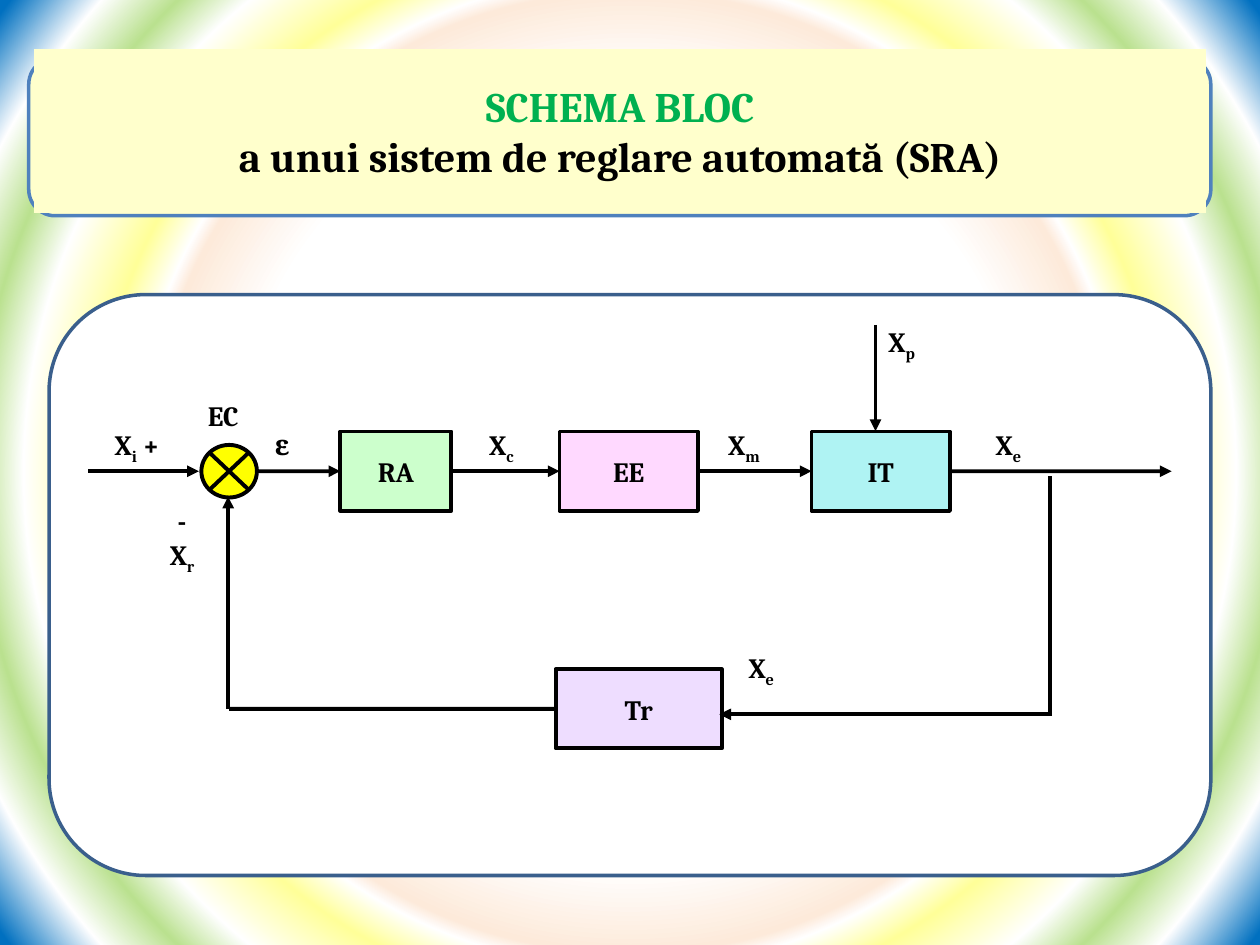
from lxml import etree
from pptx import Presentation
from pptx import util as u
from pptx.dml.color import RGBColor
from pptx.enum import shapes, text
from pptx.oxml import ns

BLACK = RGBColor(0x00, 0x00, 0x00)
WHITE = RGBColor(0xFF, 0xFF, 0xFF)
GREEN = RGBColor(0x00, 0xB0, 0x50)
CREAM = RGBColor(0xFF, 0xFF, 0xCC)
YELLOW = RGBColor(0xFF, 0xFF, 0x00)
MINT = RGBColor(0xCC, 0xFF, 0xCC)
PINK = RGBColor(0xFF, 0xD9, 0xFF)
AQUA = RGBColor(0xAF, 0xF3, 0xF3)
LILAC = RGBColor(0xEE, 0xDD, 0xFF)
BANNER_EDGE = RGBColor(0x4F, 0x81, 0xBD)
PANEL_EDGE = RGBColor(0x3A, 0x5F, 0x8C)

# Background rings: position in percent, colour
RINGS = [(50, WHITE), (61, RGBColor(0xFD, 0xEA, 0xDA)), (63, WHITE),
         (68, RGBColor(0xFF, 0xFF, 0x99)), (77, WHITE),
         (83, RGBColor(0xBA, 0xE1, 0x8F)), (90, WHITE),
         (99, RGBColor(0x00, 0x70, 0xC0))]

AXIS = 9.5          # height of the forward path, cm
BLOCK_HEIGHT = 1.6
FEEDBACK = 14.29    # height of the feedback path
LABEL_TOP = 8.61    # labels above the forward path
TOP, LEFT, BOTTOM, RIGHT = range(4)


class Diagram:
    font = "Cambria"
    size = 16
    stroke = 2.25

    def __init__(self, page):
        self.page = page

    def background(self, rings):
        self.page.background.fill.gradient()
        gradient = next(self.page._element.iter(ns.qn("a:gradFill")))
        for child in list(gradient):
            gradient.remove(child)
        stops = etree.SubElement(gradient, ns.qn("a:gsLst"))
        for position, color in rings:
            stop = etree.SubElement(stops, ns.qn("a:gs"), pos=str(position * 1000))
            etree.SubElement(stop, ns.qn("a:srgbClr"), val=str(color))
        circle = etree.SubElement(gradient, ns.qn("a:path"))
        circle.set("path", "circle")
        etree.SubElement(circle, ns.qn("a:fillToRect"),
                         l="50000", t="50000", r="50000", b="50000")

    def style_runs(self, para, color=BLACK, size=None):
        for span in para.runs:
            span.font.name = self.font
            span.font.size = u.Pt(size or self.size)
            span.font.bold = True
            span.font.color.rgb = color

    def shape(self, kind, left, top, width, height, fill, edge=BLACK, stroke=None):
        box = self.page.shapes.add_shape(
            kind, u.Cm(left), u.Cm(top), u.Cm(width), u.Cm(height))
        box.shadow.inherit = False
        box.fill.solid()
        box.fill.fore_color.rgb = fill
        box.line.color.rgb = edge
        box.line.width = u.Pt(stroke or self.stroke)
        return box

    def block(self, name, left, width, middle, fill):
        box = self.shape(shapes.MSO_SHAPE.RECTANGLE, left, middle - BLOCK_HEIGHT / 2,
                         width, BLOCK_HEIGHT, fill)
        box.text_frame.text = name
        box.text_frame.vertical_anchor = text.MSO_ANCHOR.MIDDLE
        para = box.text_frame.paragraphs[0]
        para.alignment = text.PP_ALIGN.CENTER
        para.space_after = u.Pt(10)
        self.style_runs(para)
        return box

    def line(self, start, end, arrow=True):
        """Each end is an (x, y) point in cm or a (box, side) pair."""
        loose = [(0, 0) if hasattr(tip[0], "shape_id") else tip for tip in (start, end)]
        link = self.page.shapes.add_connector(
            shapes.MSO_CONNECTOR.STRAIGHT, *[u.Cm(v) for tip in loose for v in tip])
        if hasattr(start[0], "shape_id"):
            link.begin_connect(*start)
        if hasattr(end[0], "shape_id"):
            link.end_connect(*end)
        link.line.color.rgb = BLACK
        link.line.width = u.Pt(self.stroke)
        if arrow:
            etree.SubElement(link.line._get_or_add_ln(), ns.qn("a:tailEnd"),
                             type="triangle")
        etree.SubElement(link._element.spPr, ns.qn("a:effectLst"))

    def label(self, left, top, width, height, *rows, align=text.PP_ALIGN.LEFT):
        """Each row lists its spans; the second span of a row is a subscript."""
        box = self.page.shapes.add_textbox(
            u.Cm(left), u.Cm(top), u.Cm(width), u.Cm(height))
        frame = box.text_frame
        frame.word_wrap = True
        frame.margin_left = frame.margin_top = frame.margin_right = frame.margin_bottom = 0
        for number, row in enumerate(rows):
            para = frame.add_paragraph() if number else frame.paragraphs[0]
            para.alignment = align
            for place, words in enumerate(row):
                span = para.add_run()
                span.text = words
                if place == 1:
                    span.font._element.set("baseline", "-25000")
            self.style_runs(para)

    def title(self, left, top, width, height, words, colors, size):
        box = self.page.shapes.title
        box.left, box.top, box.width, box.height = map(u.Cm, (left, top, width, height))
        box.fill.solid()
        box.fill.fore_color.rgb = CREAM
        frame = box.text_frame
        frame.text = words
        frame.auto_size = text.MSO_AUTO_SIZE.NONE
        frame.vertical_anchor = text.MSO_ANCHOR.MIDDLE
        for para, color in zip(frame.paragraphs, colors):
            para.alignment = text.PP_ALIGN.CENTER
            self.style_runs(para, color, size)
        # Bring the title in front of its banner
        self.page.shapes._spTree.append(box._element)


def main():
    deck = Presentation()
    deck.slide_width, deck.slide_height = u.Cm(25.4), u.Cm(19.05)
    diagram = Diagram(deck.slides.add_slide(deck.slide_layouts[5]))
    diagram.background(RINGS)

    # Panel, comparator and blocks
    rounded = shapes.MSO_SHAPE.ROUNDED_RECTANGLE
    diagram.shape(rounded, 0.99, 5.94, 23.42, 11.71, WHITE, PANEL_EDGE, 2)
    diagram.shape(shapes.MSO_SHAPE.FLOWCHART_SUMMING_JUNCTION,
                  4.06, AXIS - 0.53, 1.12, 1.06, YELLOW)
    regulator = diagram.block("RA", 6.86, 2.24, AXIS, MINT)
    actuator = diagram.block("EE", 11.28, 2.79, AXIS, PINK)
    plant = diagram.block("IT", 16.36, 2.79, AXIS, AQUA)
    transducer = diagram.block("Tr", 11.2, 3.35, FEEDBACK, LILAC)

    # Forward path and disturbance
    diagram.line((1.78, AXIS), (4.01, AXIS))
    diagram.line((5.18, AXIS), (regulator, LEFT))
    diagram.line((regulator, RIGHT), (actuator, LEFT))
    diagram.line((actuator, RIGHT), (plant, LEFT))
    diagram.line((plant, RIGHT), (23.62, AXIS))
    diagram.line((17.65, 6.55), (17.65, 8.69))

    # Feedback path
    diagram.line((21.16, 9.6), (21.16, 14.4), arrow=False)
    diagram.line((21.21, 14.4), (14.5, 14.4))
    diagram.line((4.62, FEEDBACK), (transducer, LEFT), arrow=False)
    diagram.line((4.6, FEEDBACK), (4.6, 10.01))

    # Signal labels
    diagram.label(2.31, LABEL_TOP, 1.63, 0.76, ["X", "i", " +"])
    diagram.label(5.54, LABEL_TOP, 0.66, 0.89, ["ε"])
    diagram.label(4.19, 8.03, 1.07, 0.79, ["EC"])
    diagram.label(2.97, 10.16, 1.4, 1.85, ["-"], ["X", "r"], align=text.PP_ALIGN.CENTER)
    for index, left, top in [("c", 9.86, LABEL_TOP), ("m", 14.68, LABEL_TOP),
                             ("e", 20.07, LABEL_TOP), ("p", 17.91, 6.55),
                             ("e", 15.09, 13.11)]:
        diagram.label(left, top, 1.04, 1.02, ["X", index])

    # Title banner
    diagram.shape(rounded, 0.58, 1.17, 23.83, 3.18, CREAM, BANNER_EDGE, 2)
    diagram.title(0.69, 0.99, 23.62, 3.3,
                  "SCHEMA BLOC\na unui sistem de reglare automată (SRA)",
                  [GREEN, BLACK], 24)

    deck.save("out.pptx")


if __name__ == "__main__":
    main()
